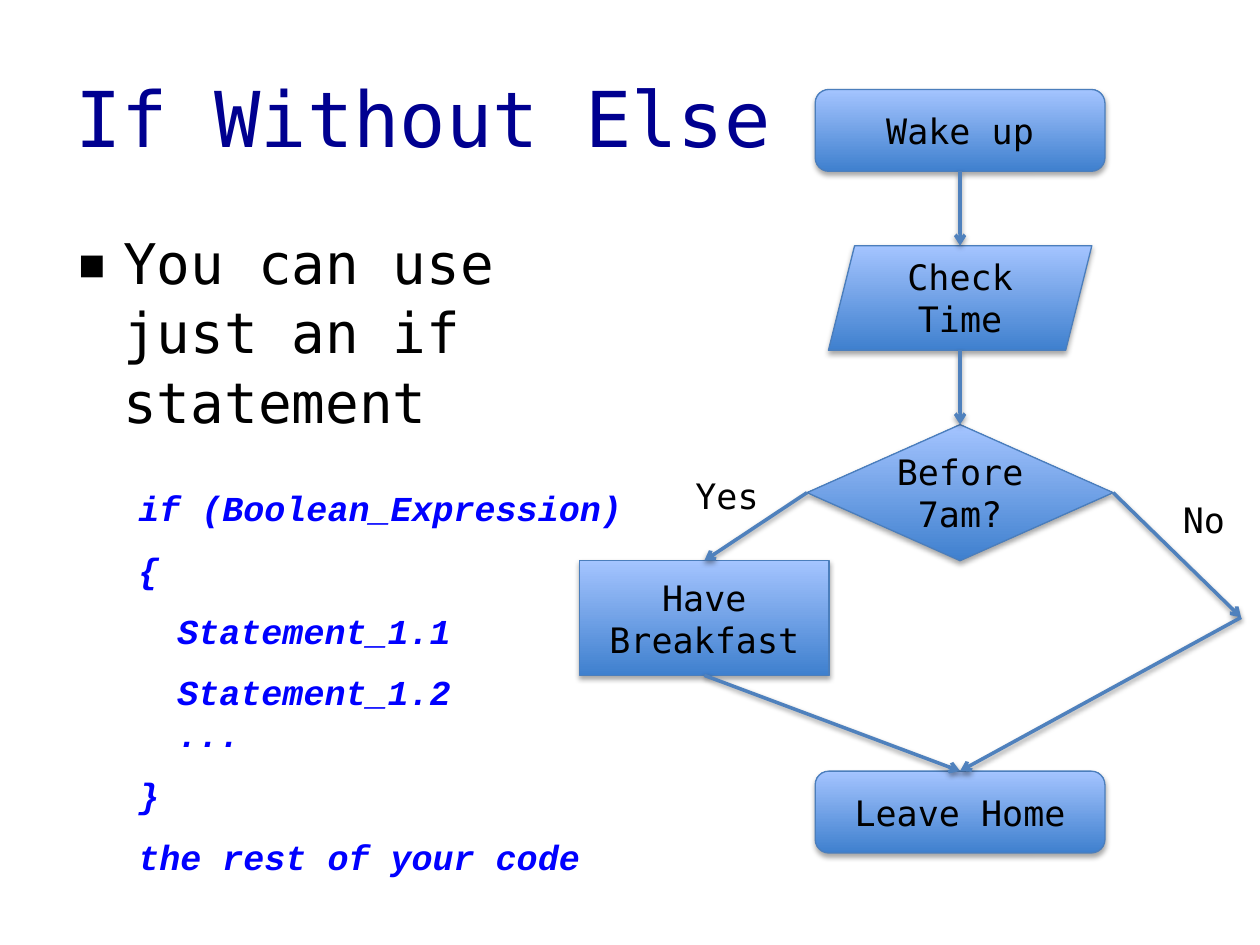
from lxml import etree
from pptx import Presentation, util as u
from pptx.dml.color import RGBColor
from pptx.enum import shapes, text
from pptx.oxml import ns

THEME = dict(
    sans="DejaVu Sans Mono", mono="Courier New",
    title="000090", ink="000000", code="0000FF",
    grad=("3F80CE", "A4C4FF"), edge="4B7EBC", arrow="4F81BD",
    title_size=44, body_size=32, small_size=20,
)

TITLE = "If Without Else"
BULLET = "You can use just an if statement"
CODE = [  # indent level, lines of one paragraph
    (0, ["if (Boolean_Expression)"]),
    (0, ["{"]),
    (1, ["Statement_1.1"]),
    (1, ["Statement_1.2", "..."]),
    (0, ["}"]),
    (0, ["the rest of your code"]),
]

AXIS = 7.62  # centre line of the flowchart
NODES = {  # preset, label, centre x, top, width, height
    "wake": ("ROUNDED_RECTANGLE", "Wake up", AXIS, 0.71, 2.3, 0.65),
    "check": ("PARALLELOGRAM", "Check Time", AXIS, 1.95, 2.09, 0.83),
    "eat": ("RECTANGLE", "Have Breakfast", 5.59, 4.45, 1.98, 0.91),
    "leave": ("ROUNDED_RECTANGLE", "Leave Home", AXIS, 6.12, 2.3, 0.65),
    "before": ("DIAMOND", "Before 7am?", AXIS, 3.37, 2.43, 1.08),
}
BEND = (9.85, 4.9)  # corner of the "No" branch
ARROWS = [  # each end is (node, side) or a point
    (("wake", "bottom"), ("check", "top")),
    (("check", "bottom"), ("before", "top")),
    (("eat", "bottom"), ("leave", "top")),
    (("before", "left"), ("eat", "top")),
    (("before", "right"), BEND),
    (BEND, ("leave", "top")),
]
BRANCHES = [("Yes", 5.42, 3.72, 0.71), ("No", 9.29, 3.91, 0.56)]


def rgb(name):
    return RGBColor.from_string(name)


def add_run(p, words, size, color, font=THEME["sans"], strong=False):
    r = p.add_run()
    r.text = words
    r.font.name, r.font.size = font, u.Pt(size)
    r.font.color.rgb = rgb(color)
    if strong:
        r.font.bold = r.font.italic = True


def add_box(s, x, y, w, h, wrap=True):
    tf = s.shapes.add_textbox(*map(u.Inches, (x, y, w, h))).text_frame
    tf.word_wrap = wrap
    return tf


def add_shadow(sp, alpha, dist):
    """Replace the themed shadow by a soft one straight below."""
    effects = sp._element.spPr.find(ns.qn("a:effectLst"))
    if effects is None:
        effects = etree.SubElement(sp._element.spPr, ns.qn("a:effectLst"))
    shadow = etree.SubElement(
        effects, ns.qn("a:outerShdw"), blurRad=str(u.Pt(3.1)),
        dist=str(u.Pt(dist)), dir="5400000", rotWithShape="0")
    color = etree.SubElement(shadow, ns.qn("a:srgbClr"), val="000000")
    etree.SubElement(color, ns.qn("a:alpha"), val=str(alpha * 1000))


def set_indent(p, margin, hang=0):
    pPr = p._p.get_or_add_pPr()
    pPr.set("marL", str(u.Inches(margin)))
    pPr.set("indent", str(-u.Inches(hang)))
    return pPr


def add_body(s):
    tf = add_box(s, 0.5, 1.75, 4.64, 4.95)
    p = tf.paragraphs[0]
    p.line_spacing = 1.03
    pPr = set_indent(p, 0.38, 0.38)
    etree.SubElement(pPr, ns.qn("a:buFont"), typeface=THEME["sans"])
    etree.SubElement(pPr, ns.qn("a:buChar"), char="▪")
    add_run(p, BULLET, THEME["body_size"], THEME["ink"])
    for i, (level, lines) in enumerate(CODE):
        p = tf.add_paragraph()
        set_indent(p, 0.5 + 0.31 * level)
        p.space_before, p.space_after = u.Pt(4 if i else 30), u.Pt(7)
        for j, line in enumerate(lines):
            if j:
                p.add_line_break()
            add_run(p, line, THEME["small_size"], THEME["code"],
                    THEME["mono"], strong=True)


def add_node(s, preset, label, cx, top, w, h):
    sp = s.shapes.add_shape(getattr(shapes.MSO_SHAPE, preset),
                            *map(u.Inches, (cx - w / 2, top, w, h)))
    sp.fill.gradient()
    sp.fill.gradient_angle = 90
    for stop, color in zip(sp.fill.gradient_stops, THEME["grad"]):
        stop.color.rgb = rgb(color)
    sp.line.color.rgb, sp.line.width = rgb(THEME["edge"]), u.Pt(0.75)
    sp.shadow.inherit = False
    add_shadow(sp, 35, 1.8)
    tf = sp.text_frame
    tf.word_wrap, tf.vertical_anchor = True, text.MSO_ANCHOR.MIDDLE
    p = tf.paragraphs[0]
    p.alignment = text.PP_ALIGN.CENTER
    add_run(p, label, THEME["small_size"], THEME["ink"])


def end_point(end):
    if end[0] not in NODES:
        return end
    node, side = end
    _, _, cx, top, w, h = NODES[node]
    return {"top": (cx, top), "bottom": (cx, top + h),
            "left": (cx - w / 2, top + h / 2),
            "right": (cx + w / 2, top + h / 2)}[side]


def add_arrow(s, start, end):
    cn = s.shapes.add_connector(
        shapes.MSO_CONNECTOR.STRAIGHT,
        *map(u.Inches, end_point(start) + end_point(end)))
    cn.line.color.rgb, cn.line.width = rgb(THEME["arrow"]), u.Pt(2)
    etree.SubElement(cn.line._get_or_add_ln(), ns.qn("a:tailEnd"), type="arrow")
    add_shadow(cn, 38, 1.6)


def main():
    prs = Presentation()
    prs.slide_width, prs.slide_height = u.Inches(10), u.Inches(7.5)
    s = prs.slides.add_slide(prs.slide_layouts[6])

    tf = add_box(s, 0.5, 0.3, 9, 1.25)
    tf.vertical_anchor = text.MSO_ANCHOR.MIDDLE
    add_run(tf.paragraphs[0], TITLE, THEME["title_size"], THEME["title"])
    add_body(s)

    for node in NODES.values():
        add_node(s, *node)
    for start, end in ARROWS:
        add_arrow(s, start, end)
    for label, x, y, w in BRANCHES:
        tf = add_box(s, x, y, w, 0.44, wrap=False)
        add_run(tf.paragraphs[0], label, THEME["small_size"], THEME["ink"])

    prs.save("out.pptx")


if __name__ == "__main__":
    main()
